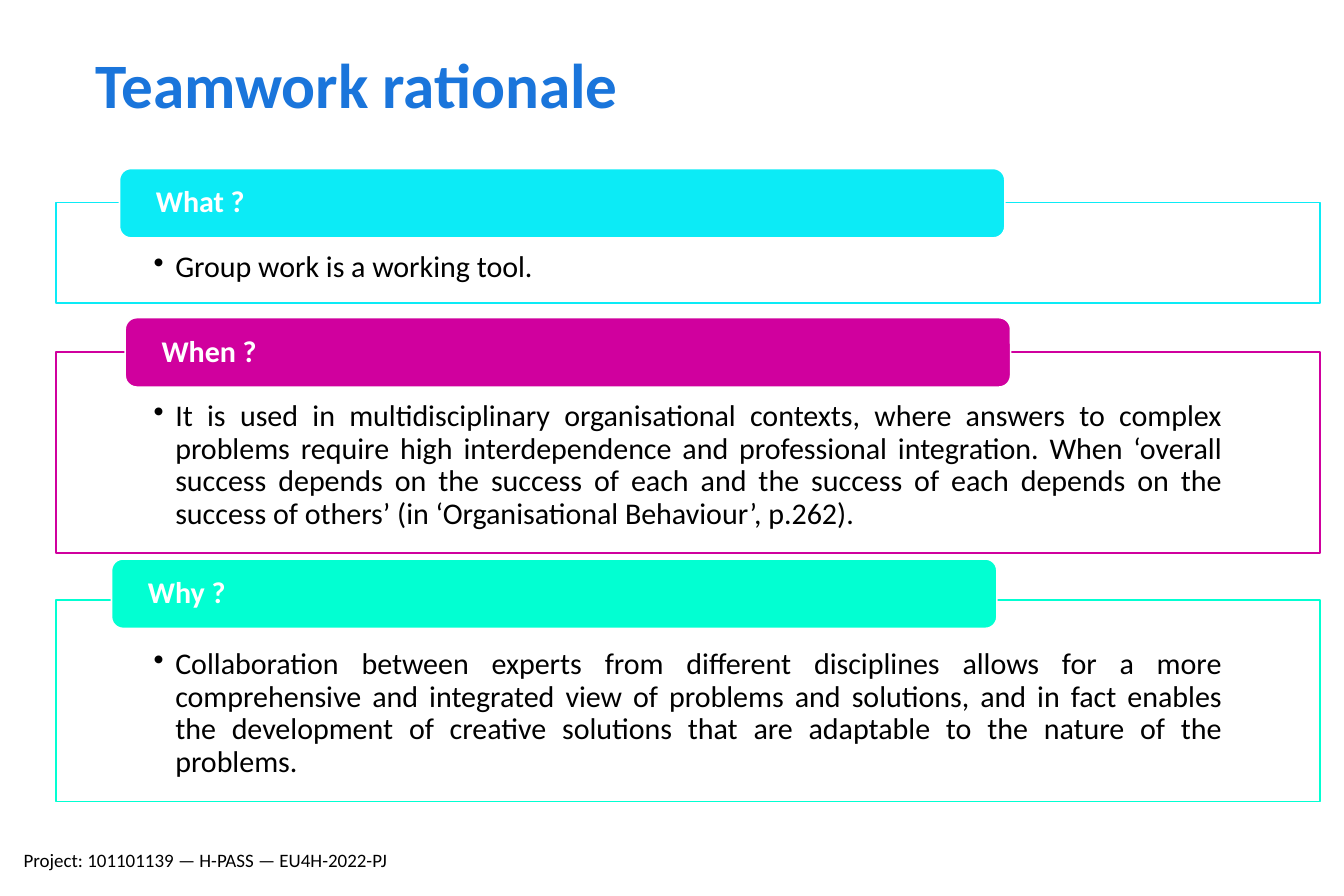
"""Build the "Teamwork rationale" slide with its three question sections."""
from lxml import etree
from pptx import Presentation
from pptx.dml.color import RGBColor
from pptx.enum import shapes, text
from pptx.oxml import ns
from pptx.util import Inches, Pt


def color(hex_string):
    return RGBColor.from_string(hex_string)


def style(paragraph, size, hex_string, bold=False):
    paragraph.font.name = "Calibri"
    paragraph.font.size = Pt(size)
    paragraph.font.bold = bold
    paragraph.font.color.rgb = color(hex_string)


sections = [
    ("What ?", "0CEBF6", 1.78, 0.88, 1.05, 1.48,
     "Group work is a working tool."),
    ("When ?", "D0009E", 3.09, 1.77, 1.1, 2.79,
     "It is used in multidisciplinary organisational contexts, where answers to "
     "complex problems require high interdependence and professional integration. "
     "When ‘overall success depends on the success of each and the success of each "
     "depends on the success of others’ (in ‘Organisational Behaviour’, p.262)."),
    ("Why ?", "02FFD2", 5.27, 1.77, 0.98, 4.91,
     "Collaboration between experts from different disciplines allows for a more "
     "comprehensive and integrated view of problems and solutions, and in fact "
     "enables the development of creative solutions that are adaptable to the "
     "nature of the problems."),
]

presentation = Presentation()
presentation.slide_width = Inches(11.81)
presentation.slide_height = Inches(7.87)
slide = presentation.slides.add_slide(presentation.slide_layouts[5])

title = slide.shapes.title
title.left, title.top = Inches(0.74), Inches(0.46)
title.width, title.height = Inches(5.49), Inches(0.63)
title.text_frame.text = "Teamwork rationale"
title.text_frame.auto_size = text.MSO_AUTO_SIZE.NONE
title.text_frame.vertical_anchor = text.MSO_ANCHOR.MIDDLE
paragraph = title.text_frame.paragraphs[0]
paragraph.alignment = text.PP_ALIGN.LEFT
paragraph.line_spacing = 0.9
style(paragraph, 40, "1A75DB", bold=True)

for heading, accent, top, height, tab_left, tab_top, answer in sections:
    box = slide.shapes.add_shape(
        shapes.MSO_SHAPE.RECTANGLE,
        Inches(0.49), Inches(top), Inches(11.11), Inches(height))
    box.fill.background()
    box.line.color.rgb = color(accent)
    frame = box.text_frame
    frame.vertical_anchor = text.MSO_ANCHOR.TOP
    frame.margin_left = frame.margin_right = Inches(0.86)
    frame.margin_top, frame.margin_bottom = Inches(0.43), Inches(0.15)
    frame.text = answer
    paragraph = frame.paragraphs[0]
    paragraph.alignment = text.PP_ALIGN.JUSTIFY
    paragraph.level = 1
    paragraph.line_spacing = 0.9
    properties = paragraph._p.get_or_add_pPr()
    properties.set("marL", str(Inches(0.19)))
    properties.set("indent", str(Inches(-0.19)))
    etree.SubElement(properties, ns.qn("a:buChar"), char="•")
    style(paragraph, 19, "000000")

    tab = slide.shapes.add_shape(
        shapes.MSO_SHAPE.ROUNDED_RECTANGLE,
        Inches(tab_left), Inches(tab_top), Inches(7.78), Inches(0.61))
    tab.fill.solid()
    tab.fill.fore_color.rgb = color(accent)
    tab.line.color.rgb = color("FFFFFF")
    frame = tab.text_frame
    frame.vertical_anchor = text.MSO_ANCHOR.MIDDLE
    frame.margin_left = frame.margin_right = Inches(0.29)
    frame.margin_top = frame.margin_bottom = 0
    frame.text = heading
    paragraph = frame.paragraphs[0]
    paragraph.alignment = text.PP_ALIGN.LEFT
    paragraph.line_spacing = 0.9
    style(paragraph, 19, "FFFFFF", bold=True)

    for shape in (box, tab):
        shape.shadow.inherit = False
        shape.line.width = Pt(1)

project = slide.shapes.add_textbox(
    Inches(0.11), Inches(7.4), Inches(3.63), Inches(0.27))
project.text_frame.word_wrap = True
project.text_frame.text = "Project: 101101139 — H-PASS — EU4H-2022-PJ"
style(project.text_frame.paragraphs[0], 12, "000000")

presentation.save("out.pptx")
